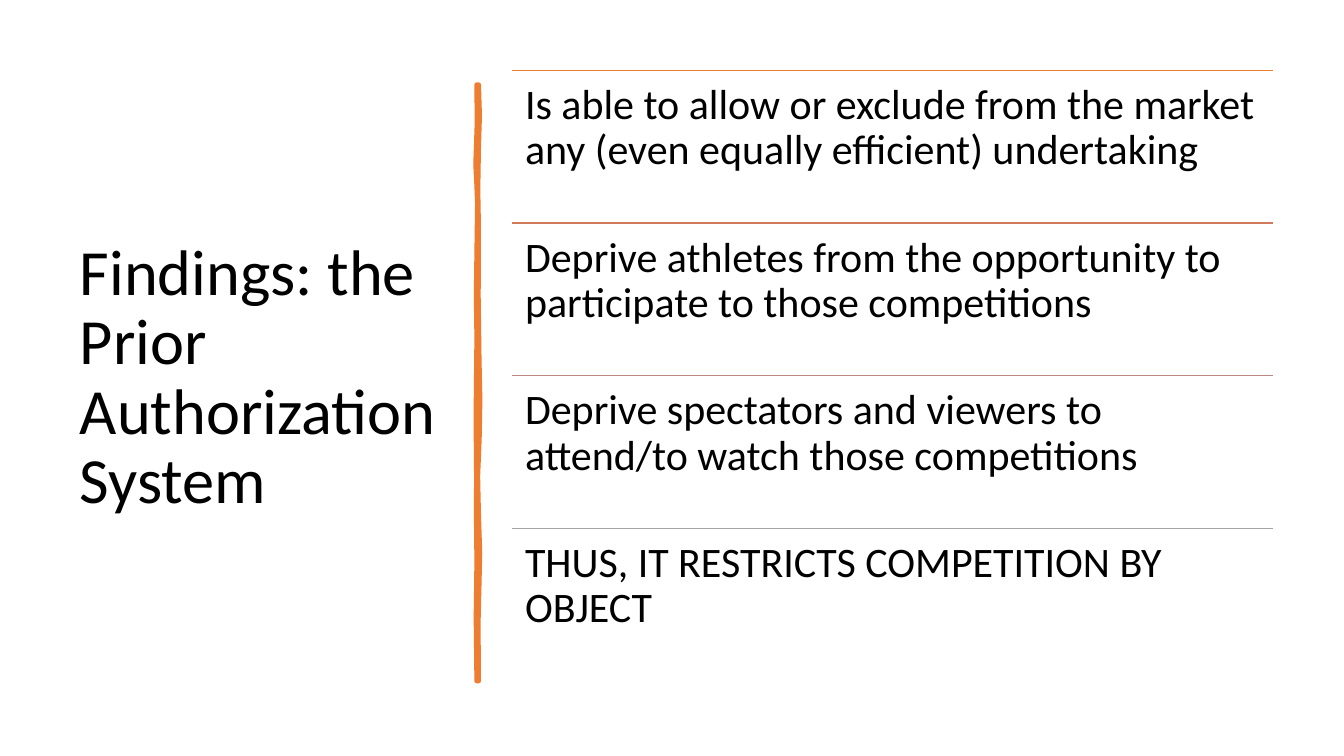
from dataclasses import dataclass
from lxml.etree import SubElement
from pptx import Presentation
from pptx.dml.color import RGBColor as Color
from pptx.enum.shapes import MSO_CONNECTOR as Connector
from pptx.enum.text import MSO_ANCHOR as Anchor, MSO_AUTO_SIZE as AutoSize
from pptx.oxml.ns import qn
from pptx.util import Pt


@dataclass(frozen=True)
class Theme:
    font: str = "Calibri"
    text: str = "000000"
    accent: str = "ED7D31"
    rules: tuple = ("ED7D31", "D17B5C", "B98A82", "A5A5A5")
    title_size: float = 46
    body_size: float = 30
    line_spacing: float = 0.9
    bar_width: float = 3.25
    rule_width: float = 1


@dataclass(frozen=True)
class Box:
    left: float
    top: float
    width: float
    height: float


THEME = Theme()
TITLE = "Findings: the Prior Authorization System"
FINDINGS = (
    "Is able to allow or exclude from the market any (even equally efficient) undertaking",
    "Deprive athletes from the opportunity to participate to those competitions",
    "Deprive spectators and viewers to attend/to watch those competitions",
    "THUS, IT RESTRICTS COMPETITION BY OBJECT",
)
# Bar edges: (distance down, distance from the left of the bar's box)
RIGHT_EDGE = ((0, 2.5), (22, 3.2), (45, 2.5), (75, 2), (102, 2.5), (151, 2.3),
              (196, 2.9), (225, 3.5), (253, 3), (280, 1.9), (307, 2.5),
              (335, 3.4), (360, 2.8), (385, 2.2), (426, 2.5))
LEFT_EDGE = ((426, 1), (381, 0.5), (341, 1), (300, 0.6), (283, 0.8), (238, 0.4),
             (181, 1), (150, 0.6), (120, 1), (85, 1.5), (70, 0.9), (57, 0.2),
             (28, 1.2), (0, 1))


def add_text(slide, box, text, size, inset_x, inset_y, anchor):
    shape = slide.shapes.add_textbox(Pt(box.left), Pt(box.top), Pt(box.width), Pt(box.height))
    frame_format = {
        "word_wrap": True, "auto_size": AutoSize.NONE, "vertical_anchor": anchor,
        "margin_left": Pt(inset_x), "margin_right": Pt(inset_x),
        "margin_top": Pt(inset_y), "margin_bottom": Pt(inset_y),
    }
    for name, value in frame_format.items():
        setattr(shape.text_frame, name, value)
    paragraph = shape.text_frame.paragraphs[0]
    paragraph.line_spacing = THEME.line_spacing
    run = paragraph.add_run()
    run.text = text
    for name, value in {"name": THEME.font, "size": Pt(size)}.items():
        setattr(run.font, name, value)
    run.font.color.rgb = Color.from_string(THEME.text)


def add_title(slide, box):
    add_text(slide, box, TITLE, THEME.title_size, 7.2, 3.6, Anchor.MIDDLE)


def add_bar(slide, box):
    """Draw the hand-drawn upright divider."""
    points = [(Pt(box.left + across), Pt(box.top + down))
              for down, across in RIGHT_EDGE + LEFT_EDGE]
    builder = slide.shapes.build_freeform(*points[0])
    builder.add_line_segments(points[1:], close=True)
    shape = builder.convert_to_shape()
    shape.shadow.inherit = False
    shape.fill.solid()
    shape.fill.fore_color.rgb = Color.from_string(THEME.accent)
    shape.line.color.rgb = Color.from_string(THEME.accent)
    shape.line.width = Pt(THEME.bar_width)
    SubElement(shape.line._get_or_add_ln(), qn("a:round"))


def add_rule(slide, left, top, width, color):
    rule = slide.shapes.add_connector(
        Connector.STRAIGHT, Pt(left), Pt(top), Pt(left + width), Pt(top))
    rule.line.color.rgb = Color.from_string(color)
    rule.line.width = Pt(THEME.rule_width)
    SubElement(rule._element.spPr, qn("a:effectLst"))


def add_findings(slide, box):
    """Stack equal rows, each with a rule above its text."""
    row_height = box.height / len(FINDINGS)
    for index, (finding, color) in enumerate(zip(FINDINGS, THEME.rules)):
        row = Box(box.left, box.top + index * row_height, box.width, row_height)
        add_rule(slide, row.left, row.top, row.width, color)
        add_text(slide, row, finding, THEME.body_size, 9, 9, Anchor.TOP)


def main():
    presentation = Presentation()
    presentation.slide_width, presentation.slide_height = Pt(960), Pt(540)
    slide = presentation.slides.add_slide(presentation.slide_layouts[6])
    add_title(slide, Box(50, 50.4, 269.5, 440))
    add_bar(slide, Box(339.5, 60.5, 3.5, 426))
    add_findings(slide, Box(366, 50.4, 543.5, 436))
    presentation.save("out.pptx")


if __name__ == "__main__":
    main()
